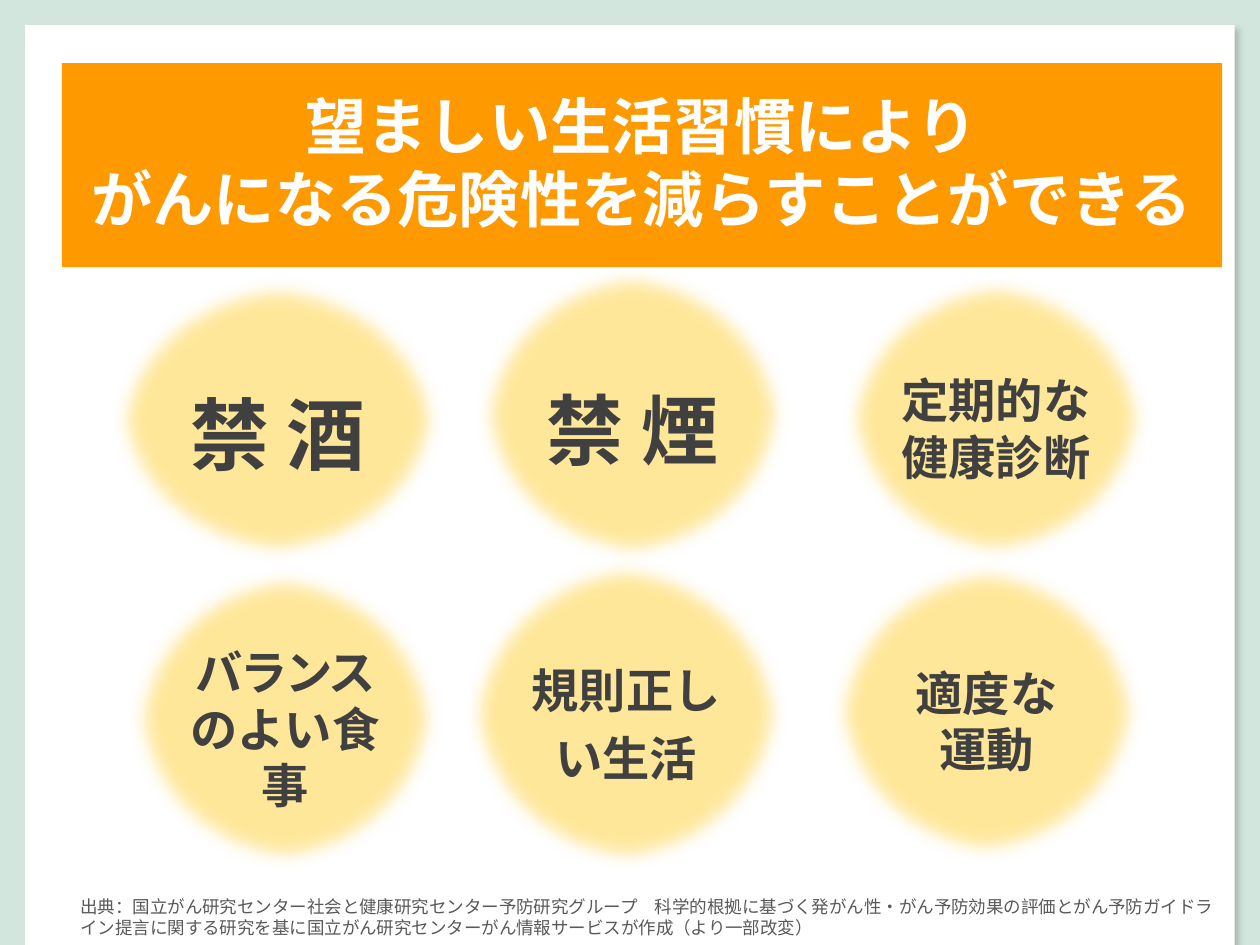
"""Build the slide on lifestyle habits that lower the risk of cancer."""
from lxml import etree
from pptx import Presentation, util as u
from pptx.dml.color import RGBColor
from pptx.enum import shapes, text
from pptx.oxml import parse_xml
from pptx.oxml.ns import qn

NS = 'xmlns:a="http://schemas.openxmlformats.org/drawingml/2006/main"'
FONT = "Noto Sans CJK JP"
MINT = RGBColor(0xD2, 0xE6, 0xDE)
WHITE = RGBColor(0xFF, 0xFF, 0xFF)
ORANGE = RGBColor(0xFF, 0x99, 0x00)
YELLOW = RGBColor(0xFF, 0xE1, 0x81)
DARK = RGBColor(0x40, 0x40, 0x40)
GREY = RGBColor(0x59, 0x59, 0x59)
LINE_PITCH = 1.2


def write(paragraph, words, size, color, bold=True, tracking=0):
    run = paragraph.add_run()
    run.text = words
    run.font.size, run.font.bold, run.font.name = u.Pt(size), bold, FONT
    run.font.color.rgb = color
    properties = run._r.get_or_add_rPr()
    etree.SubElement(properties, qn("a:ea")).set("typeface", FONT)
    if tracking:
        properties.set("spc", str(int(tracking * 100)))


def frame_text(shape, side, top, anchor):
    frame = shape.text_frame
    frame.word_wrap, frame.auto_size = True, text.MSO_AUTO_SIZE.NONE
    frame.margin_left = frame.margin_right = u.Inches(side)
    frame.margin_top, frame.margin_bottom = u.Inches(top), u.Inches(0.05)
    frame.vertical_anchor = anchor
    return frame


prs = Presentation()
prs.slide_width, prs.slide_height = u.Inches(10), u.Inches(7.5)
slide = prs.slides.add_slide(prs.slide_layouts[5])
slide.background.fill.solid()
slide.background.fill.fore_color.rgb = MINT

page = slide.shapes.add_shape(shapes.MSO_SHAPE.RECTANGLE, u.Inches(0.2), u.Inches(0.2),
                              prs.slide_width - u.Inches(0.4), prs.slide_height - u.Inches(0.2))
page.fill.solid()
page.fill.fore_color.rgb = WHITE
page.line.fill.background()
page._element.spPr.append(parse_xml(
    f'<a:effectLst {NS}><a:outerShdw blurRad="38100" dist="50800" dir="2700000" rotWithShape="0">'
    '<a:srgbClr val="000000"><a:alpha val="18000"/></a:srgbClr></a:outerShdw></a:effectLst>'))

headline = slide.shapes.title
slide.shapes._spTree.append(headline._element)
headline.left, headline.top = u.Inches(0.49), u.Inches(0.5)
headline.width, headline.height = u.Inches(9.21), u.Inches(1.62)
headline._element.spPr.append(parse_xml(
    f'<a:prstGeom {NS} prst="roundRect"><a:avLst><a:gd name="adj" fmla="val 14500"/></a:avLst></a:prstGeom>'))
headline.fill.solid()
headline.fill.fore_color.rgb = ORANGE
headline_frame = frame_text(headline, 0.1, 0.2, text.MSO_ANCHOR.TOP)
for number, words in enumerate(["望ましい生活習慣により", "がんになる危険性を減らすことができる"]):
    paragraph = headline_frame.add_paragraph() if number else headline_frame.paragraphs[0]
    paragraph.alignment = text.PP_ALIGN.CENTER
    paragraph.line_spacing = u.Pt(35 * LINE_PITCH)
    write(paragraph, words, 35, WHITE)

habits = [
    ((0.87, 2.18, 2.67, 2.3), (0.1, 0.12), 45, 1.2, [[("禁 酒", 0)]]),
    ((3.76, 2.09, 2.52, 2.4), (0.1, 0.12), 44, 1.2, [[("禁 煙", 0)]]),
    ((6.66, 2.16, 2.49, 2.32), (0.1, 0.2), 27, 1, [[("定期的な健康診断", 0)]]),
    ((1, 4.49, 2.52, 2.43), (0, 0.2), 27, 1, [[("バランスの", -1.5), ("よい食事", 0)]]),
    ((3.67, 4.41, 2.6, 2.51), (0.1, 0.12), 27, 1.2, [[("規則正しい生活", 0)]]),
    ((6.57, 4.43, 2.52, 2.43), (0, 0.2), 27, 1, [[("適度な", 0)], [("運動", 0)]]),
]
for bounds, (side, top), size, spacing, lines in habits:
    habit = slide.shapes.add_shape(shapes.MSO_SHAPE.OVAL, *map(u.Inches, bounds))
    habit.fill.solid()
    habit.fill.fore_color.rgb = YELLOW
    tint = habit._element.spPr.find(qn("a:solidFill"))[0]
    etree.SubElement(tint, qn("a:alpha")).set("val", "80000")
    habit.line.fill.background()
    habit._element.spPr.append(parse_xml(f'<a:effectLst {NS}><a:softEdge rad="127000"/></a:effectLst>'))
    paragraph = frame_text(habit, side, top, text.MSO_ANCHOR.MIDDLE).paragraphs[0]
    paragraph.alignment = text.PP_ALIGN.CENTER
    paragraph.line_spacing = u.Pt(round(size * spacing * LINE_PITCH, 1))
    for number, runs in enumerate(lines):
        if number:
            paragraph.add_line_break()
        for words, tracking in runs:
            write(paragraph, words, size, DARK, tracking=tracking)

source = slide.shapes.add_textbox(u.Inches(0.54), u.Inches(7.06), u.Inches(9.18), u.Inches(0.44))
citation = frame_text(source, 0.1, 0.05, text.MSO_ANCHOR.TOP).paragraphs[0]
citation.line_spacing = u.Pt(10 * LINE_PITCH)
write(citation, "出典：国立がん研究センター社会と健康研究センター予防研究グループ　"
      "科学的根拠に基づく発がん性・がん予防効果の評価とがん予防ガイドライン提言に関する研究を基に"
      "国立がん研究センターがん情報サービスが作成（より一部改変）", 10, GREY, bold=False)

prs.save("out.pptx")
